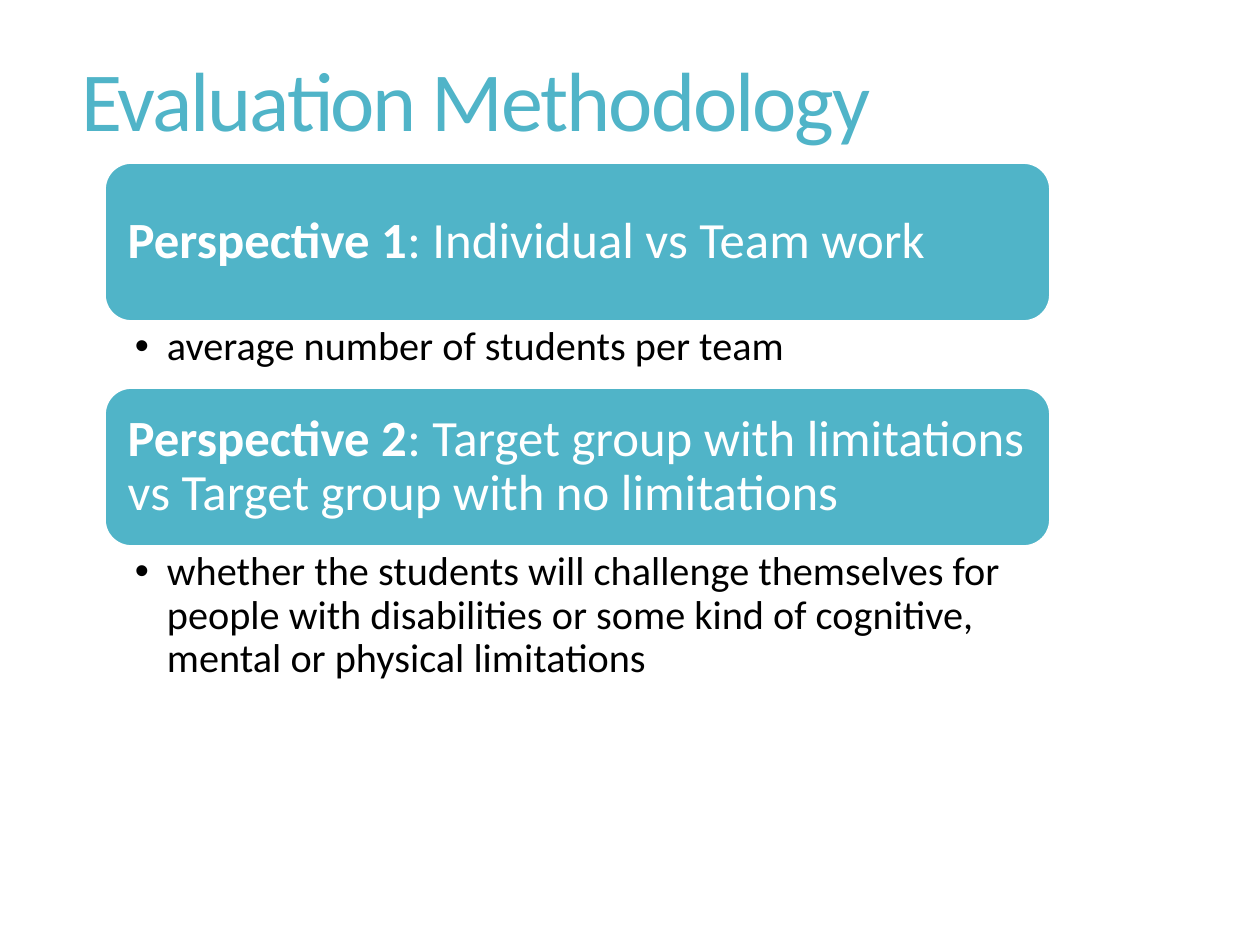
"""Build the evaluation methodology slide."""
from dataclasses import dataclass

from lxml.etree import SubElement
from pptx import Presentation
from pptx.dml.color import RGBColor
from pptx.enum.shapes import MSO_SHAPE
from pptx.enum.text import MSO_ANCHOR, PP_ALIGN
from pptx.oxml.ns import qn
from pptx.shapes.autoshape import Shape
from pptx.slide import Slide
from pptx.util import Emu, Pt


@dataclass(frozen=True)
class Theme:
    font: str = "Calibri"
    teal: str = "50B4C8"
    white: str = "FFFFFF"
    black: str = "000000"
    title: int = 48
    head: int = 29
    note: int = 23


@dataclass(frozen=True)
class Box:
    left: int
    top: int
    width: int
    height: int


@dataclass(frozen=True)
class Topic:
    label: str
    head: str
    note: str
    depth: int


THEME = Theme()
LEFT, TOP, WIDTH, CARD = 105, 163, 945, 158
TOPICS = [
    Topic("Perspective 1", ": Individual vs Team work",
          "average number of students per team", 67),
    Topic("Perspective 2",
          ": Target group with limitations vs Target group with no limitations",
          "whether the students will challenge themselves for people with disabilities "
          "or some kind of cognitive, mental or physical limitations", 145),
]


def px(count: int) -> Emu:
    """Turn pixels into EMU."""
    return Emu(round(count * 914400 / 126))


def place(box: Box) -> tuple[Emu, Emu, Emu, Emu]:
    """Give the position and size of a box in EMU."""
    return px(box.left), px(box.top), px(box.width), px(box.height)


def write(shape: Shape, *texts: str, size: int, color: str,
          inset: tuple[int, int, int, int], bold: bool = False,
          middle: bool = False, space: int = 0, bullet: int = 0) -> None:
    """Write one paragraph, with bold meant for its first run only."""
    frame = shape.text_frame
    frame.word_wrap = True
    frame.vertical_anchor = MSO_ANCHOR.MIDDLE if middle else MSO_ANCHOR.TOP
    (frame.margin_left, frame.margin_top,
     frame.margin_right, frame.margin_bottom) = map(px, inset)
    para = frame.paragraphs[0]
    para.alignment = PP_ALIGN.LEFT
    para.line_spacing = 0.9
    if bullet:
        para.level = 1
        props = para._p.get_or_add_pPr()
        props.set("marL", str(px(bullet)))
        props.set("indent", str(-px(bullet)))
        SubElement(props, qn("a:buFont"), typeface="Arial")
        SubElement(props, qn("a:buChar"), char="•")
    for index, text in enumerate(texts):
        run = para.add_run()
        run.text = text
        font = run.font
        font.name, font.size = THEME.font, Pt(size)
        font.bold = bold and index == 0
        font.color.rgb = RGBColor.from_string(color)
        if space:
            font._element.set("spc", str(space))


def card(slide: Slide, box: Box, topic: Topic) -> None:
    """Draw the rounded heading of a topic."""
    shape = slide.shapes.add_shape(MSO_SHAPE.ROUNDED_RECTANGLE, *place(box))
    shape.shadow.inherit = False
    shape.fill.solid()
    shape.fill.fore_color.rgb = RGBColor.from_string(THEME.teal)
    shape.line.color.rgb = RGBColor.from_string(THEME.white)
    shape.line.width = Pt(1)
    write(shape, topic.label, topic.head, size=THEME.head, color=THEME.white,
          inset=(15, 15, 15, 15), bold=True, middle=True)


def note(slide: Slide, box: Box, text: str) -> None:
    """Draw the bullet under a heading."""
    write(slide.shapes.add_textbox(*place(box)), text, size=THEME.note,
          color=THEME.black, inset=(30, 5, 29, 5), bullet=32)


def main() -> None:
    """Build and save the slide."""
    deck = Presentation()
    deck.slide_width, deck.slide_height = px(1260), px(945)
    slide = deck.slides.add_slide(deck.slide_layouts[6])
    title = slide.shapes.add_textbox(*place(Box(68, -10, 1114, 228)))
    write(title, "Evaluation Methodology", size=THEME.title, color=THEME.teal,
          inset=(13, 6, 13, 6), middle=True, space=-120)
    top = TOP
    for topic in TOPICS:
        card(slide, Box(LEFT, top, WIDTH, CARD), topic)
        note(slide, Box(LEFT, top + CARD, WIDTH, topic.depth), topic.note)
        top += CARD + topic.depth
    deck.save("out.pptx")


if __name__ == "__main__":
    main()
